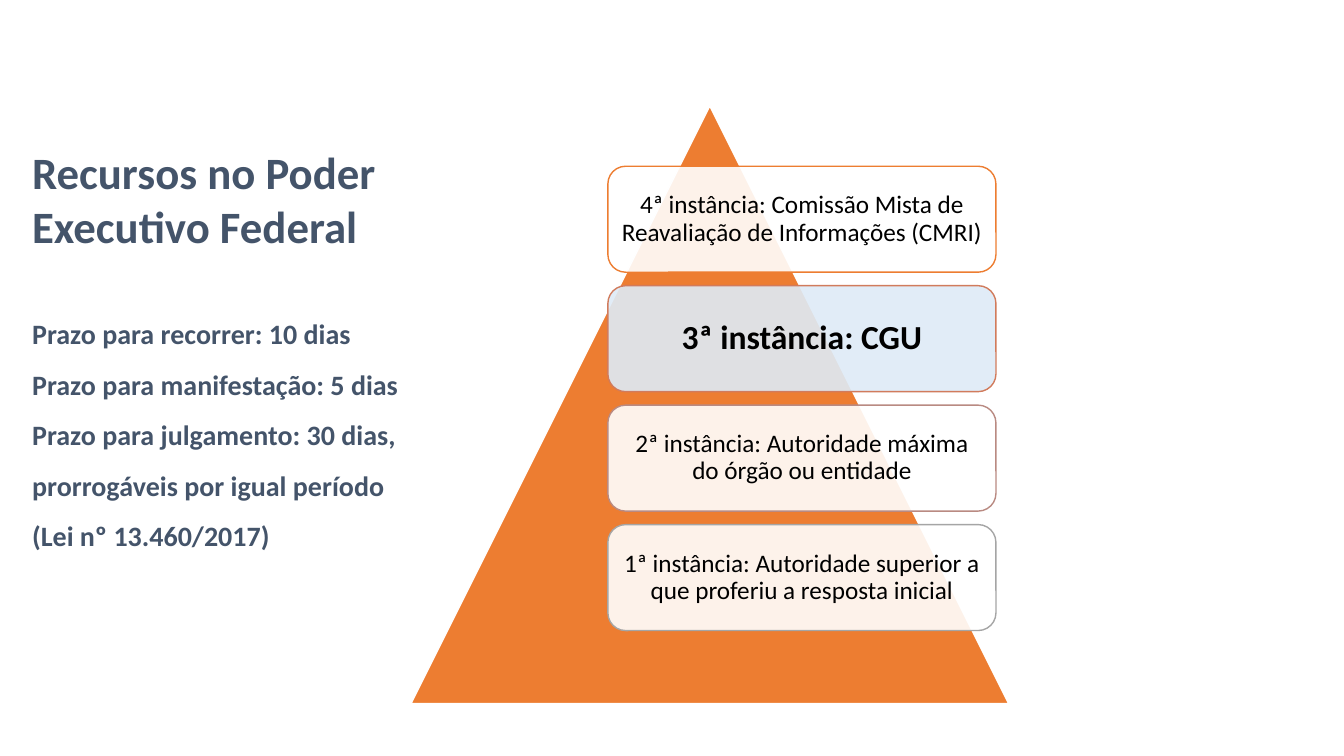
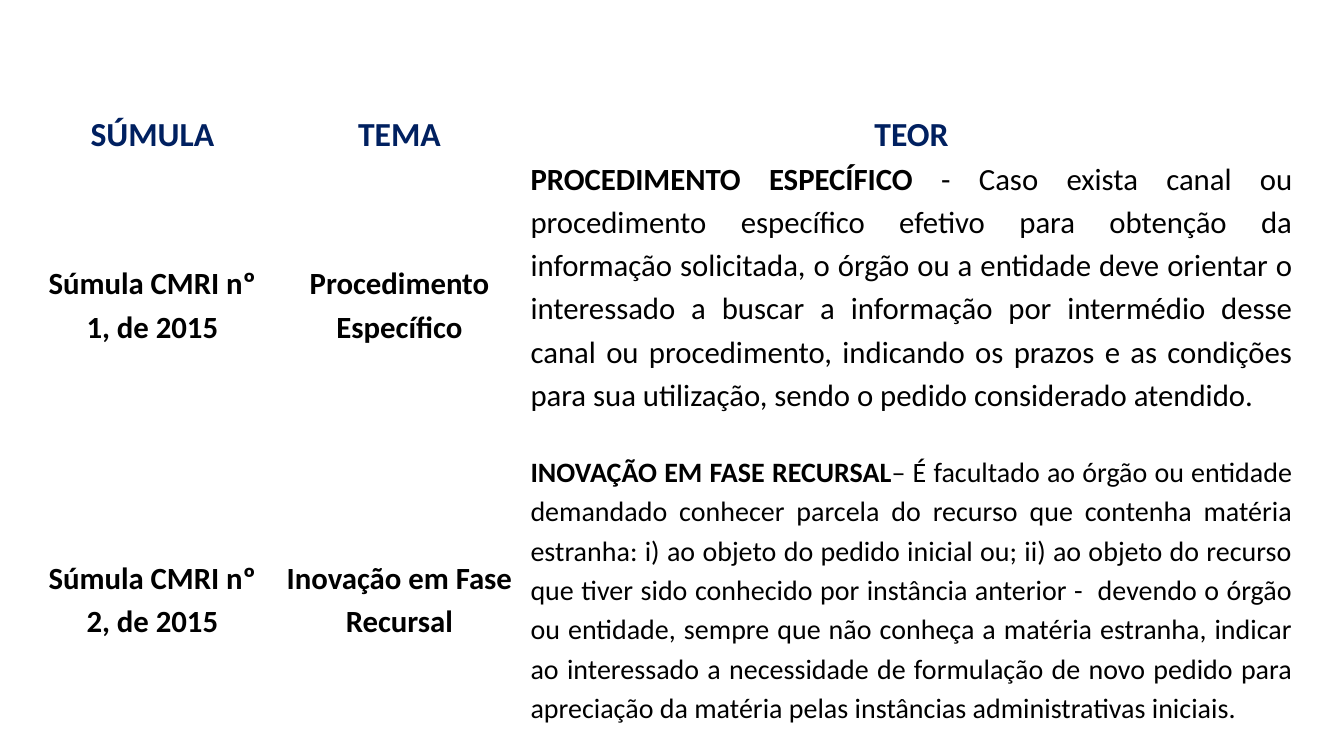
from lxml import etree
from pptx import Presentation
from pptx.dml.color import RGBColor
from pptx.enum.shapes import MSO_SHAPE
from pptx.enum.text import MSO_ANCHOR, PP_ALIGN
from pptx.oxml.ns import qn
from pptx.util import Cm, Pt

WHITE = RGBColor(0xFF, 0xFF, 0xFF)
BLACK = RGBColor(0x00, 0x00, 0x00)
SLATE = RGBColor(0x44, 0x54, 0x6A)
NAVY = RGBColor(0x00, 0x20, 0x60)
ORANGE = RGBColor(0xED, 0x7D, 0x31)
COPPER = RGBColor(0xD1, 0x7B, 0x5C)
ROSE = RGBColor(0xB9, 0x8A, 0x82)
GRAY = RGBColor(0xA5, 0xA5, 0xA5)
PALE_BLUE = RGBColor(0xDE, 0xEB, 0xF7)

TRIANGLE = MSO_SHAPE.ISOSCELES_TRIANGLE
ROUNDED = MSO_SHAPE.ROUNDED_RECTANGLE
LEFT, CENTER, JUSTIFY = PP_ALIGN.LEFT, PP_ALIGN.CENTER, PP_ALIGN.JUSTIFY
TOP, MIDDLE = MSO_ANCHOR.TOP, MSO_ANCHOR.MIDDLE

DEADLINES = [
    "Prazo para recorrer: 10 dias",
    "Prazo para manifestação: 5 dias",
    "Prazo para julgamento: 30 dias, prorrogáveis por igual período (Lei nº 13.460/2017)",
]

# Text, size, bold, fill, outline, inset in cm
INSTANCES = [
    ("4ª instância: Comissão Mista de Reavaliação de Informações (CMRI)",
     18, False, WHITE, ORANGE, 0.18),
    ("3ª instância: CGU", 24, True, PALE_BLUE, COPPER, 0.25),
    ("2ª instância: Autoridade máxima do órgão ou entidade",
     18, False, WHITE, ROSE, 0.18),
    ("1ª instância: Autoridade superior a que proferiu a resposta inicial",
     18, False, WHITE, GRAY, 0.18),
]

HEADINGS = ["SÚMULA", "TEMA", "TEOR"]

# Precedent, subject, lead-in, content, content size
PRECEDENTS = [
    ("Súmula CMRI nº 1, de 2015", "Procedimento Específico",
     "PROCEDIMENTO ESPECÍFICO ",
     "- Caso exista canal ou procedimento específico efetivo para obtenção da "
     "informação solicitada, o órgão ou a entidade deve orientar o interessado a "
     "buscar a informação por intermédio desse canal ou procedimento, indicando os "
     "prazos e as condições para sua utilização, sendo o pedido considerado atendido.",
     22),
    ("Súmula CMRI nº 2, de 2015", "Inovação em Fase Recursal",
     "INOVAÇÃO EM FASE RECURSAL",
     "– É facultado ao órgão ou entidade demandado conhecer parcela do recurso que "
     "contenha matéria estranha: i) ao objeto do pedido inicial ou; ii) ao objeto do "
     "recurso que tiver sido conhecido por instância anterior -  devendo o órgão ou "
     "entidade, sempre que não conheça a matéria estranha, indicar ao interessado a "
     "necessidade de formulação de novo pedido para apreciação da matéria pelas "
     "instâncias administrativas iniciais.",
     20),
]


class Deck:
    font = "Calibri"

    def __init__(self):
        self.file = Presentation()
        self.file.slide_width = Cm(33.87)
        self.file.slide_height = Cm(19.05)
        self.page = None

    def new_page(self):
        self.page = self.file.slides.add_slide(self.file.slide_layouts[6])

    def add_spans(self, para, spans, size, color, align=LEFT, spacing=1.0):
        """Fill a paragraph with (text, bold) spans."""
        para.alignment = align
        para.line_spacing = spacing
        for text, bold in spans:
            span = para.add_run()
            span.text = text
            span.font.name = self.font
            span.font.size = Pt(size)
            span.font.bold = bold
            span.font.color.rgb = color

    def text_box(self, left, top, width, height):
        frame = self.page.shapes.add_textbox(
            Cm(left), Cm(top), Cm(width), Cm(height)).text_frame
        frame.word_wrap = True
        return frame

    def shape(self, kind, left, top, width, height, fill, outline, opacity=100):
        shape = self.page.shapes.add_shape(
            kind, Cm(left), Cm(top), Cm(width), Cm(height))
        shape.shadow.inherit = False
        shape.fill.solid()
        shape.fill.fore_color.rgb = fill
        shape.line.color.rgb = outline
        shape.line.width = Pt(1)
        if opacity < 100:
            color = shape._element.spPr.find(qn("a:solidFill"))[0]
            etree.SubElement(color, qn("a:alpha"), val=str(opacity * 1000))
        return shape

    def card(self, left, top, width, height, text, size, bold, fill, outline, inset):
        card = self.shape(ROUNDED, left, top, width, height, fill, outline, opacity=90)
        frame = card.text_frame
        frame.word_wrap = True
        frame.vertical_anchor = MIDDLE
        frame.margin_left = frame.margin_right = Cm(inset)
        frame.margin_top = frame.margin_bottom = Cm(inset)
        self.add_spans(frame.paragraphs[0], [(text, bold)], size, BLACK, CENTER, 0.9)

    def table(self, left, top, widths, heights):
        table = self.page.shapes.add_table(
            len(heights), len(widths), Cm(left), Cm(top),
            Cm(sum(widths)), Cm(sum(heights))).table
        table.first_row = table.horz_banding = False
        for column, width in zip(table.columns, widths):
            column.width = Cm(width)
        for row, height in zip(table.rows, heights):
            row.height = Cm(height)
        return table

    def cell(self, cell, spans, size, color=BLACK, align=CENTER, anchor=MIDDLE):
        cell.fill.background()
        cell.margin_left = cell.margin_right = Cm(0.18)
        cell.margin_top = cell.margin_bottom = 0
        cell.vertical_anchor = anchor
        self.add_spans(cell.text_frame.paragraphs[0], spans, size, color, align, 1.15)


def appeals_page(deck):
    deck.new_page()
    frame = deck.text_box(0.56, 3.53, 10.19, 10.46)
    deck.add_spans(frame.paragraphs[0], [("Recursos no Poder Executivo Federal", True)],
                   32, SLATE)
    for index, text in enumerate(DEADLINES):
        para = frame.add_paragraph()
        if index == 0:
            para.space_before = Pt(34)
        deck.add_spans(para, [(text, True)], 20, SLATE, spacing=1.5)

    deck.shape(TRIANGLE, 10.36, 2.67, 15.06, 15.06, ORANGE, WHITE)
    card_height, gap = 2.67, 0.34
    for index, instance in enumerate(INSTANCES):
        top = 4.19 + index * (card_height + gap)
        deck.card(15.32, top, 9.78, card_height, *instance)


def precedents_page(deck):
    deck.new_page()
    table = deck.table(0.74, 2.74, [6.2, 6.25, 19.56], [1.19, 7.42, 7.42])
    for column, heading in enumerate(HEADINGS):
        deck.cell(table.cell(0, column), [(heading, True)], 24, NAVY, anchor=TOP)
    for row, (precedent, subject, lead, content, size) in enumerate(PRECEDENTS, 1):
        deck.cell(table.cell(row, 0), [(precedent, True)], 22)
        deck.cell(table.cell(row, 1), [(subject, True)], 22)
        deck.cell(table.cell(row, 2), [(lead, True), (content, False)], size,
                  align=JUSTIFY, anchor=TOP)


def main():
    deck = Deck()
    appeals_page(deck)
    precedents_page(deck)
    deck.file.save("out.pptx")


if __name__ == "__main__":
    main()
